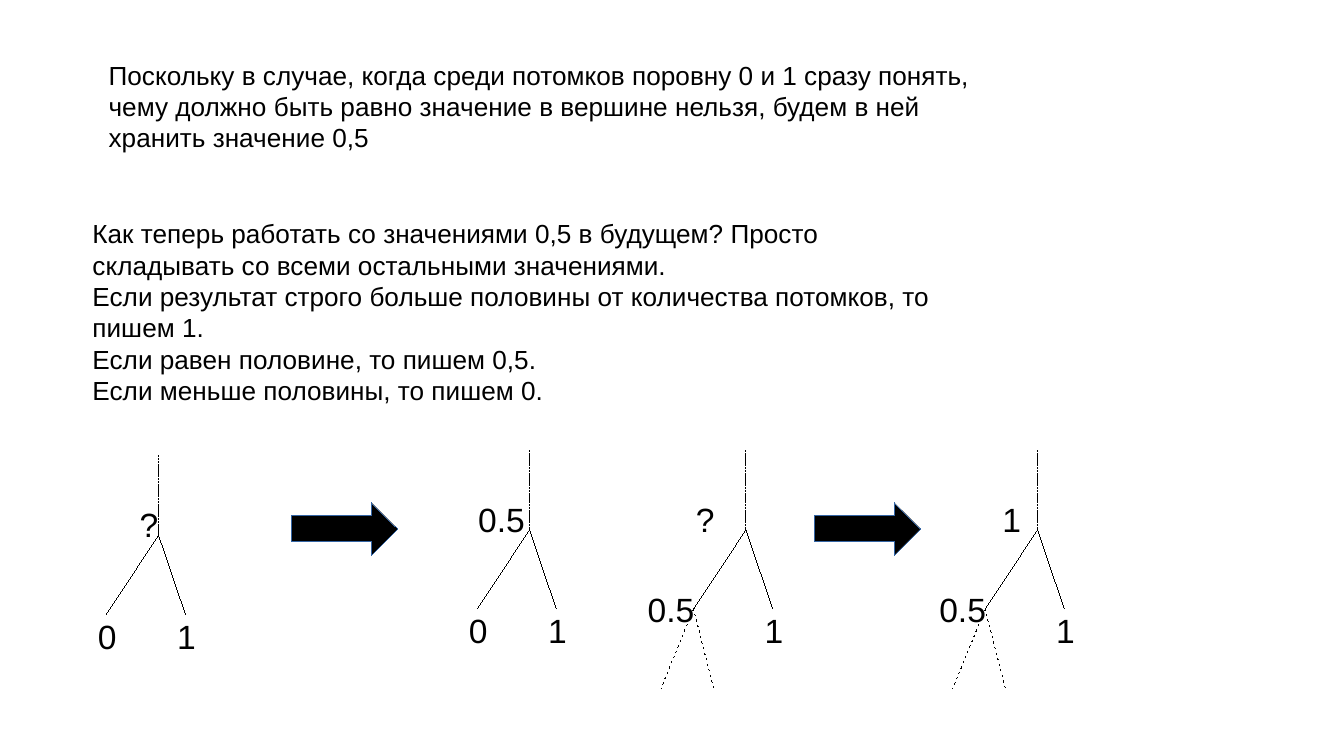
from pptx import Presentation
from pptx.dml.color import RGBColor
from pptx.enum.shapes import MSO_CONNECTOR, MSO_SHAPE
from pptx.oxml.ns import qn
from pptx.util import Inches, Pt
from lxml.etree import SubElement

INTRO = ("Поскольку в случае, когда среди потомков поровну 0 и 1 сразу понять, "
         "чему должно быть равно значение в вершине нельзя, будем в ней "
         "хранить значение 0,5")
RULES = [
    "Как теперь работать со значениями 0,5 в будущем? Просто складывать "
    "со всеми остальными значениями.",
    "Если результат строго больше половины от количества потомков, то пишем 1.",
    "Если равен половине, то пишем 0,5.",
    "Если меньше половины, то пишем 0.",
]
STEP = 0.59


def color(code):
    return RGBColor.from_string(code)


class Board:
    font = "Arial"
    ink = "000000"
    edge = "3465A4"

    def __init__(self, slide):
        self.slide = slide

    def text(self, x, y, w, h, lines, size=18):
        box = self.slide.shapes.add_textbox(Inches(x), Inches(y), Inches(w), Inches(h))
        frame = box.text_frame
        frame.word_wrap = True
        frame.text = "\n".join(lines)
        for para in frame.paragraphs:
            for run in para.runs:
                run.font.name = self.font
                run.font.size = Pt(size)
                run.font.color.rgb = color(self.ink)

    def stroke(self, shape, code, dash=None):
        shape.line.color.rgb = color(code)
        pen = shape._element.spPr.find(qn("a:ln"))
        pen.set("w", "0")
        if dash:
            SubElement(pen, qn("a:prstDash")).set("val", dash)

    def line(self, x1, y1, x2, y2, dash=None):
        link = self.slide.shapes.add_connector(
            MSO_CONNECTOR.STRAIGHT, Inches(x1), Inches(y1), Inches(x2), Inches(y2))
        self.stroke(link, self.ink, dash)
        SubElement(link._element.spPr, qn("a:effectLst"))

    def arrow(self, x, y):
        shape = self.slide.shapes.add_shape(
            MSO_SHAPE.RIGHT_ARROW, Inches(x), Inches(y), Inches(0.79), Inches(0.39))
        shape.shadow.inherit = False
        shape.fill.solid()
        shape.fill.fore_color.rgb = color(self.ink)
        self.stroke(shape, self.edge)

    def tree(self, x, y, root, shift, width, left, deep=False):
        base = y + STEP
        self.line(x, y, x - 0.39, base)
        self.line(x, y, x + 0.2, base)
        self.line(x, y - STEP, x, y, "sysDot")
        self.text(x - shift, y - 0.28, width, 0.38, [root])
        self.text(x + 0.04, y + 0.55, 0.39, 0.38, ["1"])
        if deep:
            self.text(x - 0.83, y + 0.39, 0.71, 0.38, [left])
            for end in (-0.63, -0.24):
                self.line(x - 0.39, base, x + end, base + STEP, "dot")
        else:
            self.text(x - 0.55, y + 0.55, 0.39, 0.38, [left])


def main():
    deck = Presentation()
    deck.slide_width = Inches(10)
    deck.slide_height = deck.slide_width * 9 // 16
    board = Board(deck.slides.add_slide(deck.slide_layouts[6]))

    board.text(0.71, 0.39, 6.89, 0.75, [INTRO], 14)
    board.text(0.59, 1.57, 6.5, 1.41, RULES, 14)

    board.tree(1.18, 3.98, "?", 0.24, 0.35, "0")
    board.tree(3.94, 3.94, "0.5", 0.48, 0.71, "0")
    board.tree(5.55, 3.94, "?", 0.47, 0.71, "0.5", deep=True)
    board.tree(7.72, 3.94, "1", 0.36, 0.71, "0.5", deep=True)
    for x in (2.17, 6.06):
        board.arrow(x, 3.74)

    deck.save("out.pptx")


if __name__ == "__main__":
    main()
